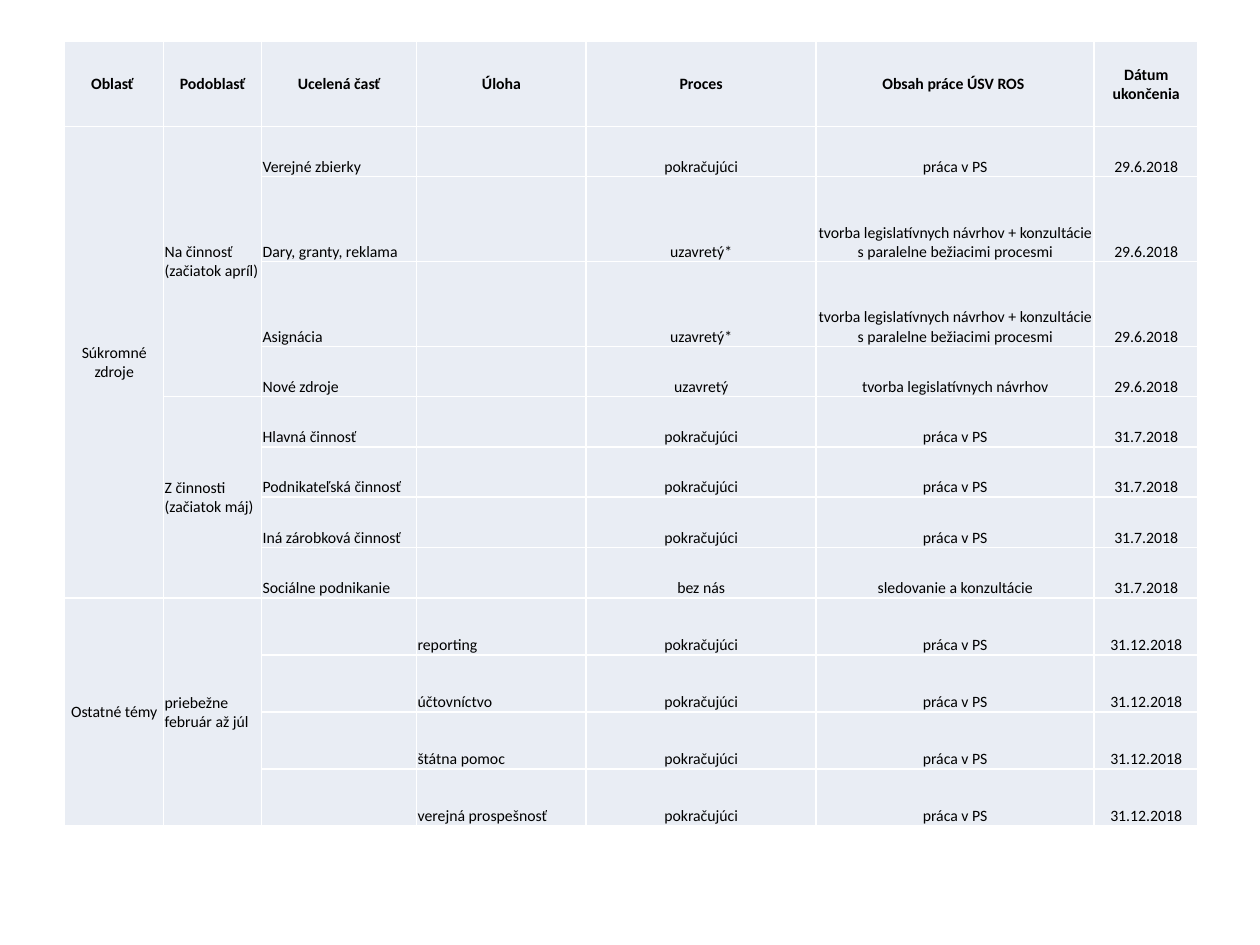
from lxml import etree
from pptx import Presentation
from pptx.dml.color import RGBColor
from pptx.enum.text import MSO_ANCHOR, PP_ALIGN
from pptx.oxml.ns import qn
from pptx.util import Pt

LEFT, CENTER = PP_ALIGN.LEFT, PP_ALIGN.CENTER
MIDDLE, BOTTOM = MSO_ANCHOR.MIDDLE, MSO_ANCHOR.BOTTOM

THEME = {
    "font": "Calibri",
    "size": Pt(9),
    "text": RGBColor.from_string("000000"),
    "fill": RGBColor.from_string("E9EDF4"),
    "border": "FFFFFF",
    "border_width": Pt(1),
}

HEADERS = ["Oblasť ", "Podoblasť", "Ucelená časť", "Úloha", "Proces",
           "Obsah práce ÚSV ROS ", "Dátum ukončenia"]

ONGOING, CLOSED, CLOSED_NOTE = "pokračujúci", "uzavretý", "uzavretý*"
GROUP_WORK = "práca v PS"
DRAFTING = "tvorba legislatívnych návrhov"
CONSULTING = DRAFTING + " + konzultácie s paralelne bežiacimi procesmi"

AREAS = [
    ("Súkromné zdroje", [
        ("Na činnosť (začiatok apríl)", "29.6.2018", [
            ("Verejné zbierky", "", ONGOING, GROUP_WORK),
            ("Dary, granty, reklama", "", CLOSED_NOTE, CONSULTING),
            ("Asignácia", "", CLOSED_NOTE, CONSULTING),
            ("Nové zdroje", "", CLOSED, DRAFTING),
        ]),
        ("Z činnosti (začiatok máj)", "31.7.2018", [
            ("Hlavná činnosť", "", ONGOING, GROUP_WORK),
            ("Podnikateľská činnosť", "", ONGOING, GROUP_WORK),
            ("Iná zárobková činnosť", "", ONGOING, GROUP_WORK),
            ("Sociálne podnikanie", "", "bez nás", "sledovanie a konzultácie"),
        ]),
    ]),
    ("Ostatné témy", [
        ("priebežne február až júl", "31.12.2018", [
            ("", task, ONGOING, GROUP_WORK)
            for task in ("reporting", "účtovníctvo", "štátna pomoc", "verejná prospešnosť")
        ]),
    ]),
]

TABLE_LEFT, TABLE_TOP = 37, 23.7
COLUMN_WIDTHS = [56.5, 56, 88.6, 96.9, 131.4, 158.9, 59.5]
TALL_ROW, SHORT_ROW, TASK_ROW = 48.5, 28.75, 32.65
COLUMN_ALIGNMENTS = [CENTER, LEFT, LEFT, LEFT, CENTER, CENTER, CENTER]


def row_height(task, content):
    if task:
        return TASK_ROW
    return TALL_ROW if content == CONSULTING else SHORT_ROW


def plan_table():
    rows, heights, merges = [HEADERS], [TALL_ROW], []
    for area, subareas in AREAS:
        area_start = len(rows)
        for subarea, date, entries in subareas:
            subarea_start = len(rows)
            for part, task, process, content in entries:
                area_text = area if len(rows) == area_start else ""
                subarea_text = subarea if len(rows) == subarea_start else ""
                rows.append([area_text, subarea_text, part, task, process, content, date])
                heights.append(row_height(task, content))
            merges.append((1, subarea_start, len(rows) - 1))
        merges.append((0, area_start, len(rows) - 1))
    return rows, heights, merges


def add_borders(cell):
    properties = cell._tc.get_or_add_tcPr()
    for side in ("a:lnL", "a:lnR", "a:lnT", "a:lnB"):
        line = etree.SubElement(properties, qn(side), w=str(THEME["border_width"]))
        fill = etree.SubElement(line, qn("a:solidFill"))
        etree.SubElement(fill, qn("a:srgbClr"), val=THEME["border"])


def style_cell(cell, text, alignment, anchor, bold):
    add_borders(cell)
    cell.fill.solid()
    cell.fill.fore_color.rgb = THEME["fill"]
    cell.margin_left = cell.margin_right = cell.margin_top = Pt(0.6)
    cell.margin_bottom = Pt(0)
    cell.vertical_anchor = anchor
    cell.text = text
    paragraph = cell.text_frame.paragraphs[0]
    paragraph.alignment = alignment
    font = paragraph.font
    font.name, font.size, font.bold = THEME["font"], THEME["size"], bold
    font.color.rgb = THEME["text"]


def add_schedule(slide):
    rows, heights, merges = plan_table()
    table = slide.shapes.add_table(
        len(rows), len(HEADERS), Pt(TABLE_LEFT), Pt(TABLE_TOP),
        Pt(sum(COLUMN_WIDTHS)), Pt(sum(heights))).table
    table.first_row = table.horz_banding = False
    for column, width in zip(table.columns, COLUMN_WIDTHS):
        column.width = Pt(width)
    for row, height in zip(table.rows, heights):
        row.height = Pt(height)
    for row_index, texts in enumerate(rows):
        is_header = row_index == 0
        for column_index, text in enumerate(texts):
            alignment = CENTER if is_header else COLUMN_ALIGNMENTS[column_index]
            anchor = MIDDLE if is_header or column_index < 2 else BOTTOM
            style_cell(table.cell(row_index, column_index), text, alignment, anchor, is_header)
    for column_index, first, last in merges:
        table.cell(first, column_index).merge(table.cell(last, column_index))


def main():
    presentation = Presentation()
    presentation.slide_width, presentation.slide_height = Pt(720), Pt(540)
    slide = presentation.slides.add_slide(presentation.slide_layouts[6])
    add_schedule(slide)
    presentation.save("out.pptx")


if __name__ == "__main__":
    main()
